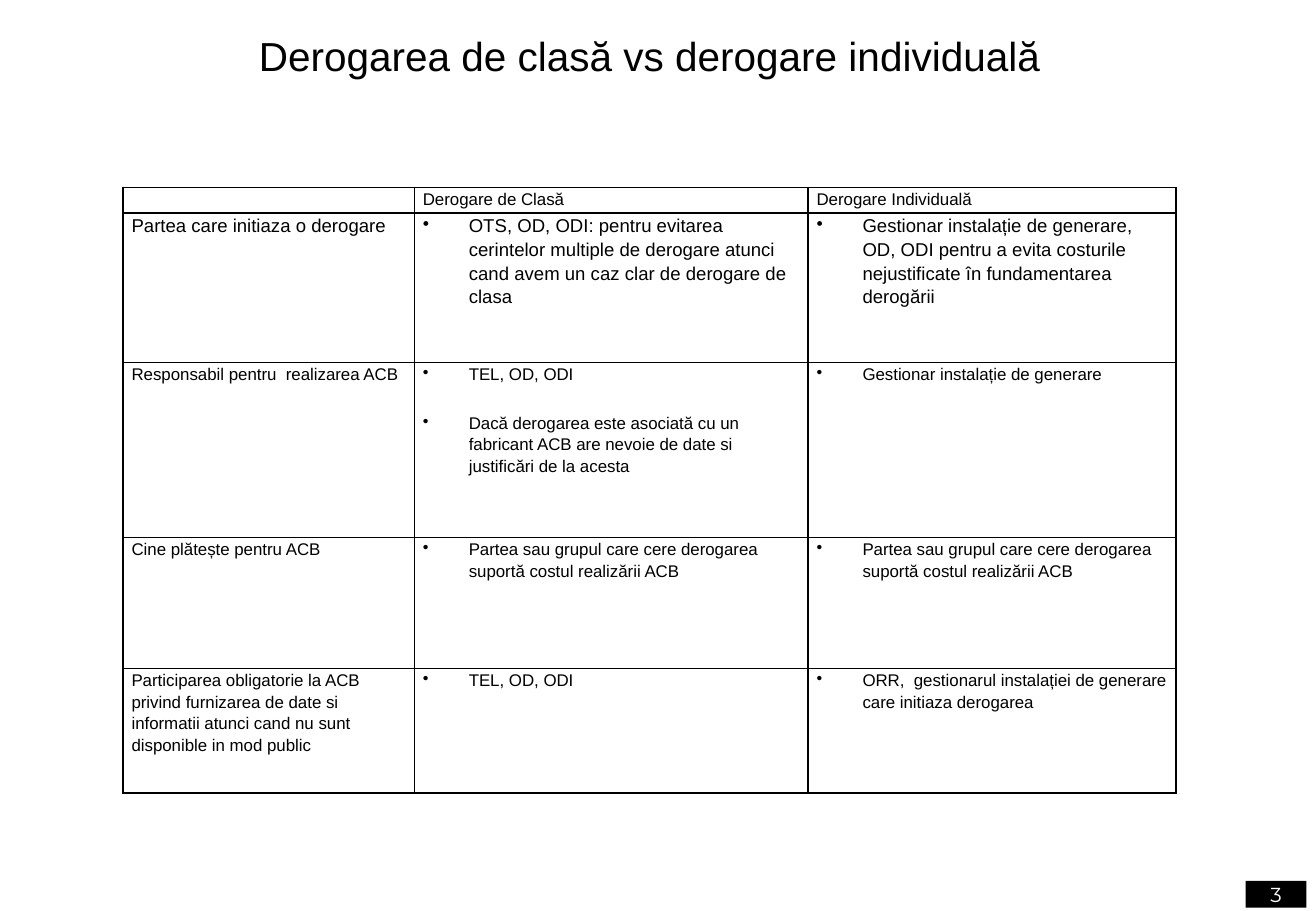
from lxml.etree import SubElement
from pptx import Presentation
from pptx.dml.color import RGBColor
from pptx.enum.shapes import MSO_SHAPE
from pptx.enum.text import MSO_ANCHOR, PP_ALIGN
from pptx.oxml.ns import qn
from pptx.util import Cm, Pt

COLORS = {"black": "000000", "white": "FFFFFF"}
TITLE = "Derogarea de clasă vs derogare individuală"
PAGE = "3"
HEADER = ["", "Derogare de Clasă", "Derogare Individuală"]
# Row label, class derogation bullets, individual derogation bullets, text size
ROWS = [
    ("Partea care initiaza o derogare",
     ["OTS, OD, ODI: pentru evitarea cerintelor multiple de derogare atunci "
      "cand avem un caz clar de derogare de clasa"],
     ["Gestionar instalație de generare, OD, ODI pentru a evita costurile "
      "nejustificate în fundamentarea derogării"], 11),
    ("Responsabil pentru  realizarea ACB",
     ["TEL, OD, ODI",
      "Dacă derogarea este asociată cu un fabricant ACB are nevoie de date si "
      "justificări de la acesta"],
     ["Gestionar instalație de generare"], 10),
    ("Cine plătește pentru ACB",
     ["Partea sau grupul care cere derogarea suportă costul realizării ACB"],
     ["Partea sau grupul care cere derogarea suportă costul realizării ACB"], 10),
    ("Participarea obligatorie la ACB privind furnizarea de date si informatii "
     "atunci cand nu sunt disponible in mod public",
     ["TEL, OD, ODI"],
     ["ORR,  gestionarul instalației de generare care initiaza derogarea"], 10),
]
COL_WIDTHS = [6.09, 8.23, 7.69]
ROW_HEIGHTS = [0.53, 3.13, 3.66, 2.74, 2.6]
INDENT = Cm(0.96)


def add_text(p, text, size=10, font="Arial", color="black", bullet=False):
    if bullet:
        pPr = p._p.get_or_add_pPr()
        pPr.set("marL", str(INDENT))
        pPr.set("indent", str(-INDENT))
        SubElement(pPr, qn("a:buChar"), char="•")
    if not text:
        SubElement(p._p, qn("a:endParaRPr"), sz=str(size * 100))
        return
    r = p.add_run()
    r.text = text
    r.font.size = Pt(size)
    r.font.name = font
    r.font.color.rgb = RGBColor.from_string(COLORS[color])


def add_borders(cell):
    tcPr = cell._tc.get_or_add_tcPr()
    for side in ("lnL", "lnR", "lnT", "lnB"):
        ln = SubElement(tcPr, qn(f"a:{side}"), w=str(Pt(1)))
        fill = SubElement(ln, qn("a:solidFill"))
        SubElement(fill, qn("a:srgbClr"), val=COLORS["black"])


def fill_cell(cell, lines, size=10, bullet=False):
    add_borders(cell)
    cell.fill.background()
    cell.margin_left = cell.margin_right = Cm(0.18)
    cell.margin_top = cell.margin_bottom = 0
    tf = cell.text_frame
    for i, line in enumerate(lines):
        p = tf.add_paragraph() if i else tf.paragraphs[0]
        p.line_spacing = 1.15
        p.space_before = Pt(6 if i else 0)
        p.space_after = Pt(10)
        add_text(p, line, size=size, bullet=bullet)


prs = Presentation()
prs.slide_width, prs.slide_height = Cm(27.51), Cm(19.05)
slide = prs.slides.add_slide(prs.slide_layouts[6])

sp = slide.shapes.add_shape(MSO_SHAPE.RECTANGLE, Cm(26.04), Cm(18.42), Cm(1.27), Cm(0.56))
sp.shadow.inherit = False
sp.fill.solid()
sp.fill.fore_color.rgb = RGBColor.from_string(COLORS["black"])
sp.line.fill.background()
tf = sp.text_frame
tf.margin_left = tf.margin_right = tf.margin_top = tf.margin_bottom = 0
tf.vertical_anchor = MSO_ANCHOR.MIDDLE
tf.paragraphs[0].alignment = PP_ALIGN.CENTER
add_text(tf.paragraphs[0], PAGE, size=12, font="Montserrat", color="white")

table = slide.shapes.add_table(
    len(ROW_HEIGHTS), len(COL_WIDTHS), Cm(2.57), Cm(3.92),
    Cm(sum(COL_WIDTHS)), Cm(sum(ROW_HEIGHTS))).table
table.first_row = table.horz_banding = False
for column, width in zip(table.columns, COL_WIDTHS):
    column.width = Cm(width)
for row, height in zip(table.rows, ROW_HEIGHTS):
    row.height = Cm(height)
for c, heading in enumerate(HEADER):
    fill_cell(table.cell(0, c), [heading])
for r, (label, by_class, individual, size) in enumerate(ROWS, 1):
    fill_cell(table.cell(r, 0), [label], size)
    fill_cell(table.cell(r, 1), by_class, size, bullet=True)
    fill_cell(table.cell(r, 2), individual, size, bullet=True)

title = slide.shapes.add_textbox(Cm(5.16), Cm(0.53), Cm(18.59), Cm(1.27))
title.text_frame.word_wrap = True
add_text(title.text_frame.paragraphs[0], TITLE, size=24)

prs.save("out.pptx")
